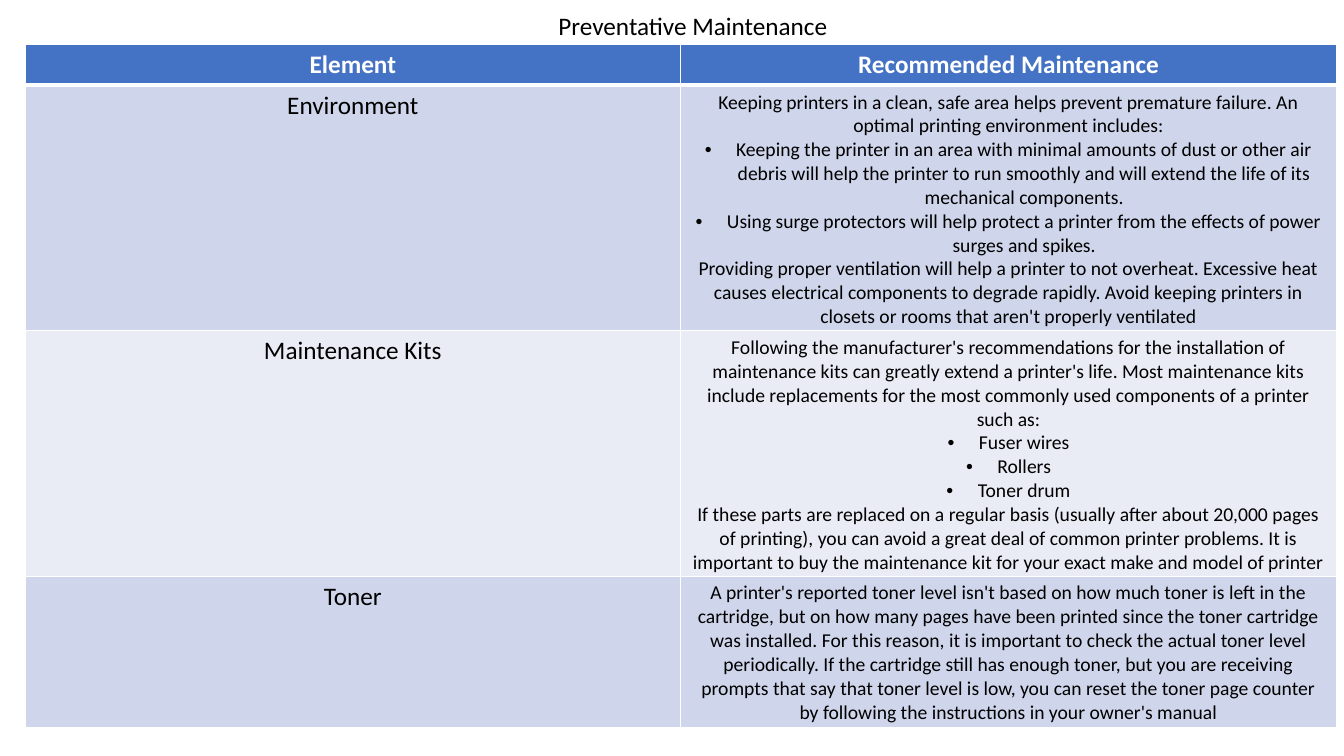
from dataclasses import dataclass

from lxml import etree
from pptx import Presentation
from pptx import util as u
from pptx.dml.color import RGBColor
from pptx.enum import text
from pptx.oxml.ns import qn


@dataclass(frozen=True)
class Theme:
    font: str = "Calibri"
    ink: str = "000000"
    white: str = "FFFFFF"
    header: str = "4472C4"
    bands: tuple = ("CFD5EA", "E9EBF5")
    heading_size: int = 18
    body_size: int = 14
    rule: float = 1
    header_rule: float = 3


# Table content: a leading bullet sign marks a list item
HEADERS = ("Element", "Recommended Maintenance")
MAINTENANCE = [
    ("Environment", 6.18, [
        "Keeping printers in a clean, safe area helps prevent premature failure. "
        "An optimal printing environment includes:",
        "•Keeping the printer in an area with minimal amounts of dust or other air "
        "debris will help the printer to run smoothly and will extend the life of "
        "its mechanical components.",
        "•Using surge protectors will help protect a printer from the effects of "
        "power surges and spikes.",
        "Providing proper ventilation will help a printer to not overheat. Excessive "
        "heat causes electrical components to degrade rapidly. Avoid keeping printers "
        "in closets or rooms that aren't properly ventilated",
    ]),
    ("Maintenance Kits", 6.18, [
        "Following the manufacturer's recommendations for the installation of "
        "maintenance kits can greatly extend a printer's life. Most maintenance kits "
        "include replacements for the most commonly used components of a printer "
        "such as:",
        "•Fuser wires",
        "•Rollers",
        "•Toner drum",
        "If these parts are replaced on a regular basis (usually after about 20,000 "
        "pages of printing), you can avoid a great deal of common printer problems. "
        "It is important to buy the maintenance kit for your exact make and model of "
        "printer",
    ]),
    ("Toner", 3.81, [
        "A printer's reported toner level isn't based on how much toner is left in "
        "the cartridge, but on how many pages have been printed since the toner "
        "cartridge was installed. For this reason, it is important to check the "
        "actual toner level periodically. If the cartridge still has enough toner, "
        "but you are receiving prompts that say that toner level is low, you can "
        "reset the toner page counter by following the instructions in your owner's "
        "manual",
    ]),
]


class SlideBuilder:
    def __init__(self, slide, theme):
        self.slide = slide
        self.theme = theme

    def style(self, p, size, color, align, bold=False):
        p.alignment = align
        p.font.name = self.theme.font
        p.font.size = u.Pt(size)
        p.font.bold = bold
        p.font.color.rgb = RGBColor.from_string(color)

    def title(self, words, left, top, width, height):
        sp = self.slide.shapes.title
        sp.left, sp.top, sp.width, sp.height = map(u.Cm, (left, top, width, height))
        tf = sp.text_frame
        tf.text = words
        tf.word_wrap = True
        tf.auto_size = text.MSO_AUTO_SIZE.SHAPE_TO_FIT_TEXT
        tf.vertical_anchor = text.MSO_ANCHOR.TOP
        self.style(tf.paragraphs[0], self.theme.heading_size, self.theme.ink,
                   text.PP_ALIGN.LEFT)

    def table(self, left, top, width, heights):
        frame = self.slide.shapes.add_table(
            len(heights), 2, u.Cm(left), u.Cm(top), u.Cm(width), u.Cm(sum(heights)))
        for row, height in zip(frame.table.rows, heights):
            row.height = u.Cm(height)
        return frame.table

    def cell(self, cell, lines, size, color, fill, top_rule, bottom_rule, bold=False):
        rule = self.theme.rule
        for side, weight in zip("LRTB", (rule, rule, top_rule, bottom_rule)):
            self.border(cell, side, weight)
        cell.fill.solid()
        cell.fill.fore_color.rgb = RGBColor.from_string(fill)
        tf = cell.text_frame
        tf.text = "\n".join(line.lstrip("•") for line in lines)
        for p, line in zip(tf.paragraphs, lines):
            self.style(p, size, color, text.PP_ALIGN.CENTER, bold)
            if line.startswith("•"):
                self.bullet(p)

    def border(self, cell, side, weight):
        ln = etree.SubElement(cell._tc.get_or_add_tcPr(), qn(f"a:ln{side}"),
                              w=str(u.Pt(weight)))
        solid = etree.SubElement(ln, qn("a:solidFill"))
        etree.SubElement(solid, qn("a:srgbClr"), val=self.theme.white)

    def bullet(self, p):
        indent = u.Cm(0.79)
        pPr = p._p.get_or_add_pPr()
        pPr.set("marL", str(indent))
        pPr.set("indent", str(-indent))
        pPr.insert(0, etree.Element(qn("a:buFont"), typeface="Arial"))
        pPr.insert(1, etree.Element(qn("a:buChar"), char="•"))


def main():
    theme = Theme()
    prs = Presentation()
    prs.slide_width, prs.slide_height = u.Cm(33.87), u.Cm(19.05)
    builder = SlideBuilder(prs.slides.add_slide(prs.slide_layouts[5]), theme)

    # Title
    builder.title("Preventative Maintenance", 13.82, 0.13, 7.62, 1.02)

    # Table header
    heights = [1.03] + [height for _, height, _ in MAINTENANCE]
    table = builder.table(0.63, 1.12, 33.05, heights)
    for column, words in enumerate(HEADERS):
        builder.cell(table.cell(0, column), [words], theme.heading_size, theme.white,
                     theme.header, theme.rule, theme.header_rule, bold=True)

    # Banded maintenance rows
    for row, (element, _, advice) in enumerate(MAINTENANCE, start=1):
        fill = theme.bands[(row - 1) % 2]
        top_rule = theme.header_rule if row == 1 else theme.rule
        columns = (([element], theme.heading_size), (advice, theme.body_size))
        for column, (lines, size) in enumerate(columns):
            builder.cell(table.cell(row, column), lines, size, theme.ink, fill,
                         top_rule, theme.rule)

    prs.save("out.pptx")


if __name__ == "__main__":
    main()
